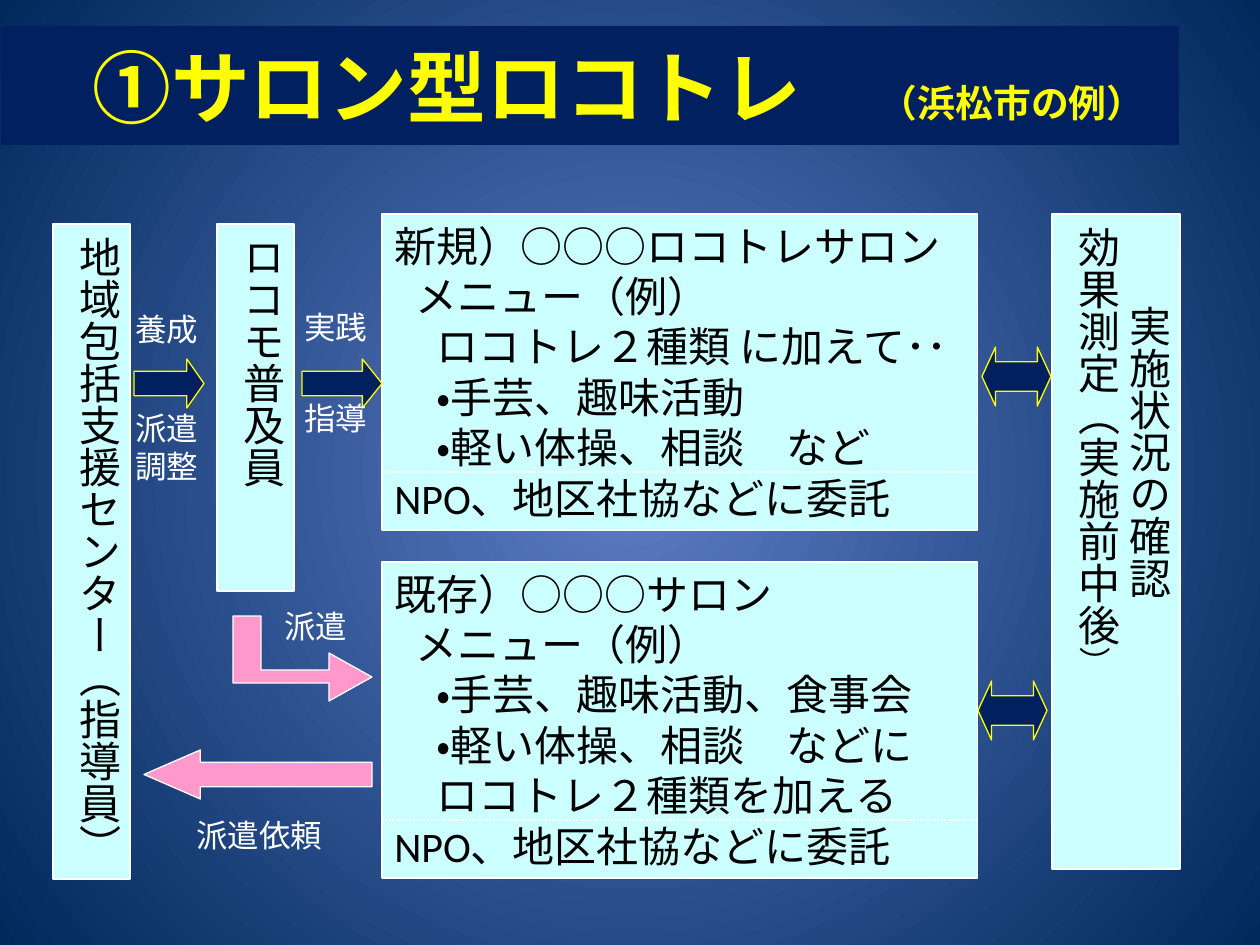
from lxml import etree
from pptx import Presentation
from pptx.dml.color import RGBColor
from pptx.enum.dml import MSO_LINE
from pptx.enum.lang import MSO_LANGUAGE_ID
from pptx.enum.shapes import MSO_CONNECTOR, MSO_SHAPE
from pptx.enum.text import MSO_ANCHOR, PP_ALIGN
from pptx.oxml.ns import qn
from pptx.util import Pt

PX = 914400 // 126  # EMU in one px
NAVY, YELLOW, WHITE, BLACK = "002060", "FFFF00", "FFFFFF", "000000"
PALE, PINK = "CCFFFF", "FF99CC"
BODY = {"size": Pt(24), "color": BLACK}
LABEL = {"size": Pt(18), "color": WHITE}


def color(value):
    return RGBColor.from_string(value)


def px(*values):
    return [value * PX for value in values]


def paint(shape, fill, line=None):
    shape.shadow.inherit = False
    shape.fill.solid()
    shape.fill.fore_color.rgb = color(fill)
    if line:
        shape.line.color.rgb = color(line)
        shape.line.width = Pt(0.75)
    else:
        shape.line.fill.background()


def set_background(slide):
    fill = slide.background.fill
    fill.gradient()
    for stop, value in zip(fill.gradient_stops, ("5E7CC5", "00295C")):
        stop.color.rgb = color(value)
    gradient = slide.element.xpath(".//p:bg//a:gradFill")[0]
    for linear in gradient.findall(qn("a:lin")):
        gradient.remove(linear)
    circle = etree.SubElement(gradient, qn("a:path"), path="circle")
    edges = dict.fromkeys("ltrb", "50000")
    etree.SubElement(circle, qn("a:fillToRect"), edges)


def add_run(paragraph, text, formats):
    run = paragraph.add_run()
    run.text = text
    values = {"name": "Calibri", "language_id": MSO_LANGUAGE_ID.JAPANESE, **formats}
    run.font.color.rgb = color(values.pop("color"))
    for name, value in values.items():
        setattr(run.font, name, value)


def write(shape, lines, align=PP_ALIGN.LEFT, anchor=MSO_ANCHOR.TOP, right=0):
    """Each line is (indent in px, [(text, formats), ...])."""
    frame = shape.text_frame
    frame.word_wrap = True
    frame.vertical_anchor = anchor
    for index, (indent, runs) in enumerate(lines):
        paragraph = frame.add_paragraph() if index else frame.paragraphs[0]
        paragraph.alignment = align
        properties = paragraph._p.get_or_add_pPr()
        properties.set("marL", str(indent * PX))
        properties.set("marR", str(right * PX))
        for text, formats in runs:
            add_run(paragraph, text, formats)


def add_panel(slide, box, fill=PALE, line=WHITE):
    shape = slide.shapes.add_shape(MSO_SHAPE.RECTANGLE, *px(*box))
    paint(shape, fill, line)
    return shape


def add_vertical_panel(slide, box, lines, **layout):
    shape = add_panel(slide, box)
    write(shape, lines, **layout)
    shape.text_frame._txBody.bodyPr.set("vert", "eaVert")


def add_salon(slide, top, lines):
    left, width, height = 382, 596, 316
    shape = add_panel(slide, (left, top, width, height))
    write(shape, [(indent, [(text, BODY)]) for indent, text in lines])
    # Dotted rule above the last line
    rule = top + 258
    connector = slide.shapes.add_connector(
        MSO_CONNECTOR.STRAIGHT, *px(left, rule, left + width, rule))
    connector.line.color.rgb = color(WHITE)
    connector.line.width = Pt(1)
    connector.line.dash_style = MSO_LINE.ROUND_DOT
    etree.SubElement(connector._element.spPr, qn("a:effectLst"))


def add_arrow(slide, kind, box, head, fill=NAVY, line=YELLOW):
    shape = slide.shapes.add_shape(kind, *px(*box))
    shape.adjustments[0] = 0.5
    shape.adjustments[1] = head
    paint(shape, fill, line)


def add_bent_arrow(slide, points):
    builder = slide.shapes.build_freeform(*points[0], scale=PX)
    builder.add_line_segments(points[1:], close=True)
    paint(builder.convert_to_shape(), PINK, WHITE)


def add_label(slide, text, left, top, width=90, height=50):
    shape = slide.shapes.add_textbox(*px(left, top, width, height))
    write(shape, [(0, [(text, LABEL)])])


def main():
    presentation = Presentation()
    presentation.slide_width, presentation.slide_height = px(1260, 945)
    slide = presentation.slides.add_slide(presentation.slide_layouts[6])
    set_background(slide)

    # Title band
    title = add_panel(slide, (1, 26, 1178, 119), NAVY, None)
    heading = {"size": Pt(45), "color": YELLOW, "bold": True}
    write(title, [(79, [("①サロン型ロコトレ　", heading),
                        ("（浜松市の例）", {**heading, "size": Pt(21.6)})])],
          anchor=MSO_ANCHOR.MIDDLE)

    # New and existing salons
    add_salon(slide, 214, [
        (0, "新規）○○○ロコトレサロン"), (21, "メニュー（例）"),
        (42, "ロコトレ２種類 に加えて･･"), (42, "・手芸、趣味活動"),
        (42, "・軽い体操、相談　など"), (0, "NPO、地区社協などに委託")])
    add_salon(slide, 562, [
        (0, "既存）○○○サロン"), (21, "メニュー（例）"),
        (42, "・手芸、趣味活動、食事会"), (42, "・軽い体操、相談　などに"),
        (42, "ロコトレ２種類を加える"), (0, "NPO、地区社協などに委託")])

    # Vertical panels
    add_vertical_panel(slide, (1052, 214, 128, 655), [
        (0, [("実施状況の確認", BODY)]),
        (0, [("効果測定（実施前中後", BODY), ("）", {**BODY, "size": Pt(18)})])],
        align=PP_ALIGN.CENTER, right=172)
    for left, height, text in ((53, 655, "地域包括支援センター（指導員）"),
                               (217, 367, "ロコモ普及員")):
        add_vertical_panel(slide, (left, 224, 77, height), [(0, [(text, BODY)])])

    # Arrows
    add_arrow(slide, MSO_SHAPE.RIGHT_ARROW, (134, 359, 70, 49), 0.35)
    add_arrow(slide, MSO_SHAPE.RIGHT_ARROW, (302, 359, 80, 49), 0.4)
    for left, top in ((982, 347), (978, 681)):
        add_arrow(slide, MSO_SHAPE.LEFT_RIGHT_ARROW, (left, top, 69, 59), 0.23)
    add_bent_arrow(slide, [
        (372, 677), (329, 653), (329, 670), (261, 670), (261, 616),
        (233, 616), (233, 683), (329, 683), (329, 701)])
    add_arrow(slide, MSO_SHAPE.LEFT_ARROW, (144, 750, 228, 49), 1.15, PINK, WHITE)

    # Arrow labels
    add_label(slide, "養成", 123, 304)
    add_label(slide, "派遣調整", 123, 403, height=88)
    add_label(slide, "実践", 292, 302)
    add_label(slide, "指導", 292, 393)
    add_label(slide, "派遣", 272, 601)
    add_label(slide, "派遣依頼", 184, 810, width=159)

    presentation.save("out.pptx")


if __name__ == "__main__":
    main()
